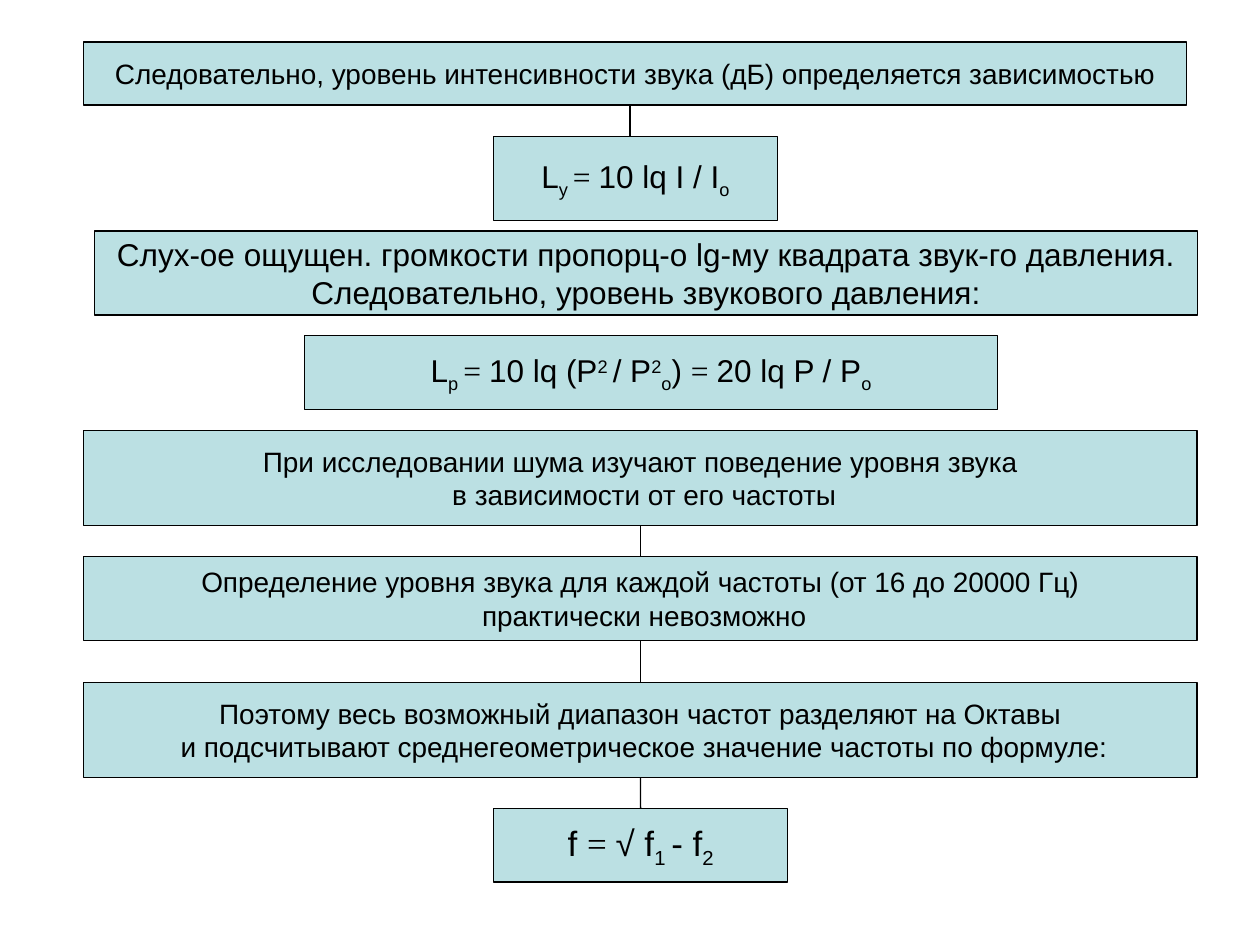
from pptx import Presentation
from pptx.dml.color import RGBColor
from pptx.enum.shapes import MSO_CONNECTOR, MSO_SHAPE
from pptx.enum.text import MSO_ANCHOR, PP_ALIGN
from pptx.oxml.ns import qn
from pptx.util import Cm, Pt
from lxml import etree

RECTANGLE = MSO_SHAPE.RECTANGLE
STRAIGHT = MSO_CONNECTOR.STRAIGHT
MIDDLE = MSO_ANCHOR.MIDDLE
CENTER = PP_ALIGN.CENTER
PALE_TEAL = RGBColor(0xBB, 0xE0, 0xE3)
BLACK = RGBColor(0, 0, 0)
LINE_WIDTH = Pt(0.75)
BOTTOM_SIDE, TOP_SIDE = 2, 0

# Baseline shifts in thousandths of a percent
NORMAL, SUB, SUPER = 0, -25000, 30000

# Formulas as (text, baseline) pieces
INTENSITY_LEVEL = [("L", NORMAL), ("у ", SUB), ("= ", NORMAL),
                   ("10 lq I / I", NORMAL), ("o", SUB)]
PRESSURE_LEVEL = [("L", NORMAL), ("p ", SUB), ("= ", NORMAL),
                  ("10 lq (P", NORMAL), ("2 ", SUPER), ("/ P", NORMAL),
                  ("2", SUPER), ("o", SUB), (") ", NORMAL), ("= ", NORMAL),
                  ("20 lq P / P", NORMAL), ("o", SUB)]
MEAN_FREQUENCY = [("f ", NORMAL), ("= ", NORMAL), ("√ f", NORMAL),
                  ("1 ", SUB), ("- f", NORMAL), ("2", SUB)]

# Boxes from top to bottom: left, top, width, height (cm), text size, lines
BOXES = [
    (1.69, 0.85, 22.23, 1.27, 16,
     ["Следовательно, уровень интенсивности звука (дБ) определяется зависимостью"]),
    (9.95, 2.75, 5.72, 1.69, 18, [INTENSITY_LEVEL]),
    (1.91, 4.66, 22.23, 1.69, 18,
     ["Слух-ое ощущен. громкости пропорц-о lg-му квадрата звук-го давления.",
      "Следовательно, уровень звукового давления:"]),
    (6.14, 6.77, 13.97, 1.48, 18, [PRESSURE_LEVEL]),
    (1.69, 8.68, 22.44, 1.91, 16,
     ["При исследовании шума изучают поведение уровня звука",
      " в зависимости от его частоты"]),
    (1.69, 11.22, 22.44, 1.69, 16,
     ["Определение уровня звука для каждой частоты (от 16 до 20000 Гц)",
      " практически невозможно"]),
    (1.69, 13.76, 22.44, 1.91, 16,
     ["Поэтому весь возможный диапазон частот разделяют на Октавы",
      " и подсчитывают среднегеометрическое значение частоты по формуле:"]),
    (9.95, 16.3, 5.93, 1.48, 20, [MEAN_FREQUENCY]),
]

deck = Presentation()
deck.slide_width, deck.slide_height = Cm(25.4), Cm(19.05)
page = deck.slides.add_slide(deck.slide_layouts[6])

# Boxes with statements and formulas
boxes = []
for left, top, width, height, size, lines in BOXES:
    box = page.shapes.add_shape(RECTANGLE, Cm(left), Cm(top), Cm(width), Cm(height))
    box.shadow.inherit = False
    box.fill.solid()
    box.fill.fore_color.rgb = PALE_TEAL
    box.line.color.rgb = BLACK
    box.line.width = LINE_WIDTH
    frame = box.text_frame
    frame.word_wrap = False
    frame.vertical_anchor = MIDDLE
    for index, line in enumerate(lines):
        para = frame.add_paragraph() if index else frame.paragraphs[0]
        para.alignment = CENTER
        pieces = [(line, NORMAL)] if isinstance(line, str) else line
        for text, baseline in pieces:
            span = para.add_run()
            span.text = text
            span.font.size = Pt(size)
            span.font.name = "Times New Roman" if text == "= " else "Arial"
            span.font.color.rgb = BLACK
            if baseline:
                span.font._element.set("baseline", str(baseline))
    boxes.append(box)

# The first link stands slightly left of the box centres, so it is not joined
links = [page.shapes.add_connector(STRAIGHT, Cm(12.7), Cm(2.12), Cm(12.7), Cm(2.75))]

# Links between the last four boxes
for upper, lower in zip(boxes[4:], boxes[5:]):
    link = page.shapes.add_connector(STRAIGHT, 0, 0, 0, 0)
    link.begin_connect(upper, BOTTOM_SIDE)
    link.end_connect(lower, TOP_SIDE)
    links.append(link)

for link in links:
    link.line.color.rgb = BLACK
    link.line.width = LINE_WIDTH
    etree.SubElement(link._element.spPr, qn("a:effectLst"))

deck.save("out.pptx")
